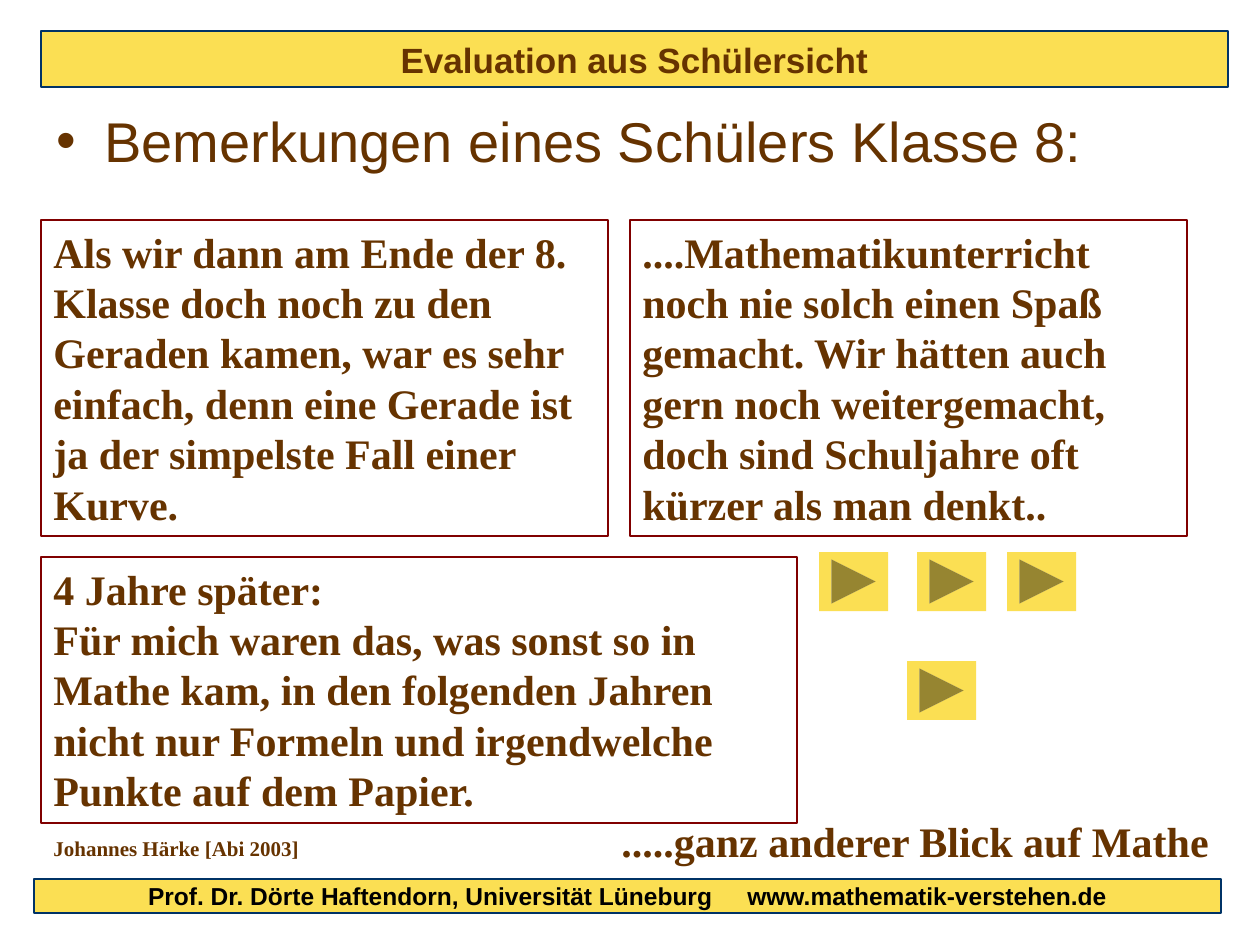
from dataclasses import dataclass

from lxml import etree
from pptx import Presentation
from pptx.dml.color import RGBColor
from pptx.enum.shapes import MSO_SHAPE
from pptx.enum.text import MSO_ANCHOR, PP_ALIGN
from pptx.oxml.ns import qn
from pptx.util import Emu, Pt

RECT = MSO_SHAPE.RECTANGLE
FORWARD = MSO_SHAPE.ACTION_BUTTON_FORWARD_OR_NEXT
TOP, MIDDLE = MSO_ANCHOR.TOP, MSO_ANCHOR.MIDDLE
LEFT, CENTER = PP_ALIGN.LEFT, PP_ALIGN.CENTER
PX_PER_INCH = 126


def px(length):
    return Emu(round(length * 914400 / PX_PER_INCH))


@dataclass(frozen=True)
class Theme:
    yellow: str = "FBDF53"
    navy: str = "003366"
    maroon: str = "800000"
    brown: str = "663300"
    black: str = "000000"
    sans: str = "Arial"
    serif: str = "Times New Roman"
    heading: int = 20
    topic: int = 32
    quote: int = 24
    footer: int = 14
    source: int = 12


class SlideBuilder:
    def __init__(self, slide, theme):
        self.shapes = slide.shapes
        self.theme = theme

    def _write(self, shape, paragraphs, font, align=LEFT, **frame_format):
        """Fill the shape with paragraphs, each a list of runs."""
        frame = shape.text_frame
        values = {"word_wrap": True, "vertical_anchor": TOP, **frame_format}
        for name, value in values.items():
            setattr(frame, name, value)
        color = font.pop("color", self.theme.brown)
        for index, runs in enumerate(paragraphs):
            paragraph = frame.paragraphs[0] if index == 0 else frame.add_paragraph()
            paragraph.alignment = align
            for text in runs:
                run = paragraph.add_run()
                run.text = text
                for name, value in font.items():
                    setattr(run.font, name, value)
                run.font.color.rgb = RGBColor.from_string(color)
        return frame

    def _shape(self, kind, box, fill=None, line=None):
        shape = self.shapes.add_shape(kind, *map(px, box))
        shape.shadow.inherit = False
        if fill:
            shape.fill.solid()
            shape.fill.fore_color.rgb = RGBColor.from_string(fill)
        else:
            shape.fill.background()
        if line:
            shape.line.color.rgb = RGBColor.from_string(line)
            shape.line.width = Pt(0.75)
        else:
            shape.line.fill.background()
        return shape

    def banner(self, box, runs, size, color, **frame_format):
        theme = self.theme
        bar = self._shape(RECT, box, theme.yellow, theme.navy)
        font = {"name": theme.sans, "size": Pt(size), "bold": True, "color": color}
        return self._write(bar, [runs], font, CENTER,
                           vertical_anchor=MIDDLE, **frame_format)

    def topic(self, box, text):
        theme = self.theme
        font = {"name": theme.sans, "size": Pt(theme.topic)}
        frame = self._write(self.shapes.add_textbox(*map(px, box)),
                            [[text]], font, margin_top=px(10))
        properties = frame.paragraphs[0]._p.get_or_add_pPr()
        indent = px(48)
        properties.set("marL", str(indent))
        properties.set("indent", str(-indent))
        etree.SubElement(properties, qn("a:buFont"), typeface=theme.sans)
        etree.SubElement(properties, qn("a:buChar"), char="•")

    def quote(self, box, *paragraphs):
        frame_shape = self._shape(RECT, box, line=self.theme.maroon)
        self._write(frame_shape, [[text] for text in paragraphs],
                    self._serif(self.theme.quote))

    def remark(self, box, text, size):
        self._write(self.shapes.add_textbox(*map(px, box)), [[text]],
                    self._serif(size), word_wrap=False)

    def _serif(self, size):
        return {"name": self.theme.serif, "size": Pt(size), "bold": True}

    def forward_button(self, left, top):
        self._shape(FORWARD, (left, top, 69, 59), self.theme.yellow)


def main():
    deck = Presentation()
    deck.slide_width, deck.slide_height = px(1260), px(945)
    theme = Theme()
    page = SlideBuilder(deck.slides.add_slide(deck.slide_layouts[6]), theme)

    page.banner((41, 31, 1187, 56), ["Evaluation aus Schülersicht"],
                theme.heading, theme.brown)
    page.topic((44, 96, 1181, 94), "Bemerkungen eines Schülers Klasse 8:")

    page.quote((41, 220, 567, 316),
               "Als wir dann am Ende der 8. Klasse doch noch zu den Geraden kamen, "
               "war es sehr einfach, denn eine Gerade ist ja der simpelste Fall "
               "einer Kurve.")
    page.quote((630, 220, 557, 316),
               "....Mathematikunterricht noch nie solch einen Spaß gemacht. "
               "Wir hätten auch gern noch weitergemacht,",
               "doch sind Schuljahre oft kürzer als man denkt..")
    page.quote((41, 557, 756, 266),
               "4 Jahre später:",
               "Für mich waren das, was sonst so in Mathe kam, in den folgenden "
               "Jahren nicht nur Formeln und irgendwelche Punkte auf dem Papier.")

    page.remark((609, 809, 615, 63), ".....ganz anderer Blick auf Mathe", theme.quote)
    page.remark((41, 829, 271, 38), "Johannes Härke [Abi 2003]", theme.source)

    footer = page.banner(
        (34, 879, 1187, 34),
        ["Prof. Dr. Dörte Haftendorn, Universität Lüneburg", " ",
         "www.mathematik-verstehen.de"],
        theme.footer, theme.black, margin_top=px(1), margin_bottom=px(1))
    gap = footer.paragraphs[0].runs[1]
    gap._r.get_or_add_rPr().set("spc", "1560")  # widens the gap before the address

    for left, top in ((819, 552), (917, 552), (1007, 552), (907, 661)):
        page.forward_button(left, top)

    deck.save("out.pptx")


if __name__ == "__main__":
    main()
